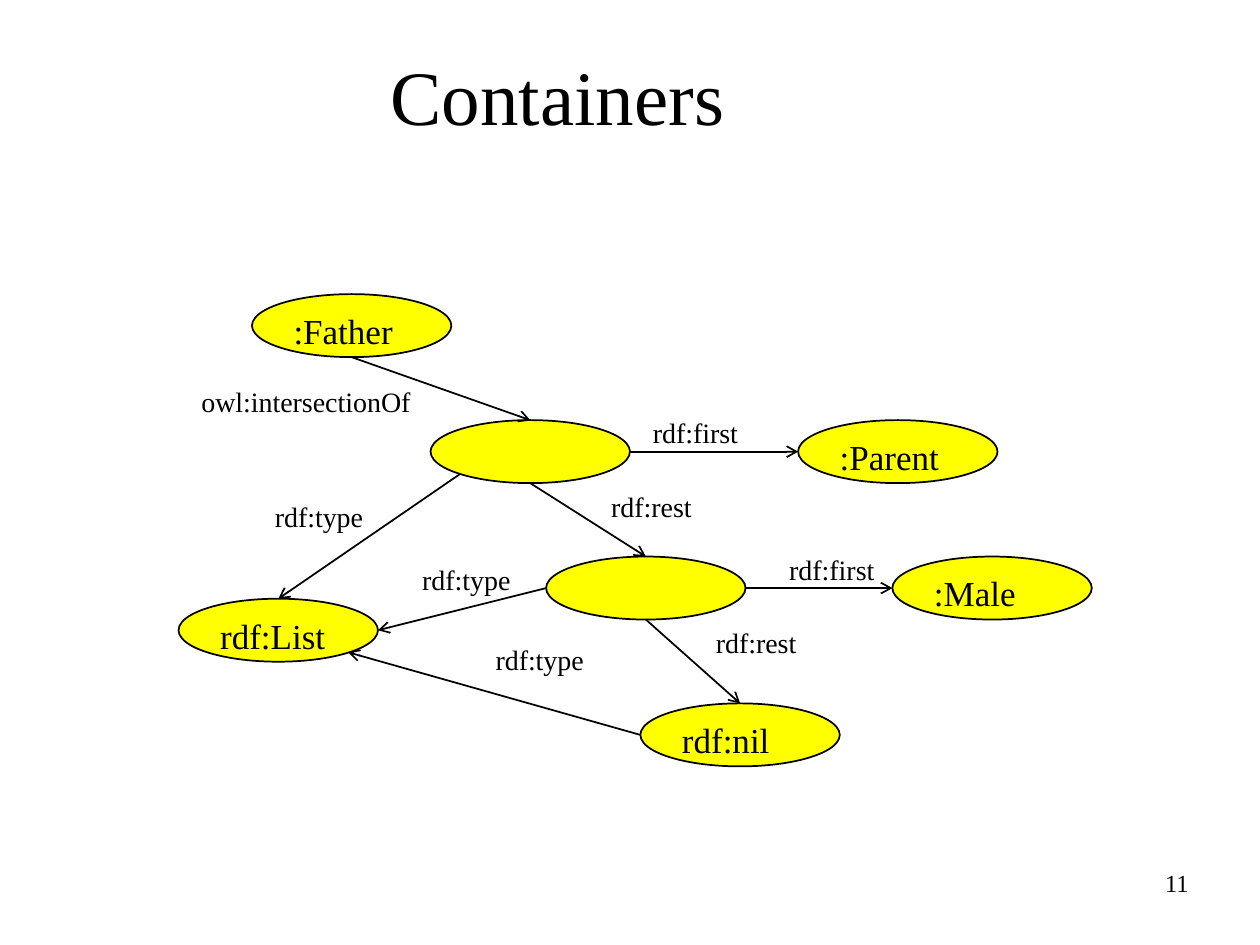
from dataclasses import dataclass

from lxml import etree
from pptx import Presentation
from pptx import util as u
from pptx.dml.color import RGBColor
from pptx.enum import shapes, text
from pptx.oxml.ns import qn


@dataclass(frozen=True)
class Theme:
    font: str = "Times New Roman"
    ink: RGBColor = RGBColor(0, 0, 0)
    node: RGBColor = RGBColor(255, 255, 0)
    title: int = 44
    name: int = 20
    label: int = 16
    number: int = 14
    line: float = 1


THEME = Theme()
DIAGONAL = 0.15
SITES = {
    "top": (0, 0.5, 0),
    "left": (2, 0, 0.5),
    "bottom left": (3, DIAGONAL, 1 - DIAGONAL),
    "bottom": (4, 0.5, 1),
    "bottom right": (5, 1 - DIAGONAL, 1 - DIAGONAL),
    "right": (6, 1, 0.5),
}
NODE_WIDTH, NODE_HEIGHT = 4.02, 1.27
LABEL_HEIGHT = 0.94

NODES = {
    "parent": (":Parent", 16.09, 8.47),
    "male": (":Male", 17.99, 11.22),
    "nil": ("rdf:nil", 12.91, 14.18),
    "list": ("rdf:List", 3.6, 12.07),
    "second": ("", 11.01, 11.22),
    "first": ("", 8.68, 8.47),
    "father": (":Father", 5.08, 5.93),
}
ARROWS = [
    ("father", "bottom", "first", "top"),
    ("first", "bottom left", "list", "top"),
    ("second", "left", "list", "right"),
    ("first", "bottom", "second", "top"),
    ("second", "bottom", "nil", "top"),
    ("first", "right", "parent", "left"),
    ("second", "right", "male", "left"),
    ("nil", "left", "list", "bottom right"),
]
LABEL_WIDTHS = {
    "owl:intersectionOf": 4.8,
    "rdf:type": 2.34,
    "rdf:first": 2.26,
    "rdf:rest": 2.16,
}
LABELS = [
    ("owl:intersectionOf", 3.81, 7.62),
    ("rdf:type", 5.29, 9.95),
    ("rdf:first", 12.91, 8.26),
    ("rdf:first", 15.66, 11.01),
    ("rdf:rest", 12.07, 9.74),
    ("rdf:rest", 14.18, 12.49),
    ("rdf:type", 8.26, 11.22),
    ("rdf:type", 9.74, 12.83),
]


def write(shape, words, size, theme, align=text.PP_ALIGN.LEFT,
          anchor=text.MSO_ANCHOR.TOP, wrap=True, fit=text.MSO_AUTO_SIZE.NONE):
    frame = shape.text_frame
    frame.word_wrap = wrap
    frame.auto_size = fit
    frame.vertical_anchor = anchor
    para = frame.paragraphs[0]
    para.alignment = align
    span = para.add_run()
    span.text = words
    span.font.name = theme.font
    span.font.size = u.Pt(size)
    span.font.color.rgb = theme.ink


class Painter:
    def __init__(self, deck, theme):
        self.theme = theme
        self.page = deck.slides.add_slide(deck.slide_layouts[5])

    def title(self, words, *area):
        box = self.page.shapes.title
        box.left, box.top, box.width, box.height = map(u.Cm, area)
        write(box, words, self.theme.title, self.theme, anchor=text.MSO_ANCHOR.BOTTOM)

    def textbox(self, words, size, *area, **style):
        box = self.page.shapes.add_textbox(*map(u.Cm, area))
        write(box, words, size, self.theme, wrap=False, **style)

    def label(self, words, left, top):
        self.textbox(words, self.theme.label, left, top, LABEL_WIDTHS[words],
                     LABEL_HEIGHT, fit=text.MSO_AUTO_SIZE.SHAPE_TO_FIT_TEXT)

    def node(self, words, left, top):
        area = map(u.Cm, (left, top, NODE_WIDTH, NODE_HEIGHT))
        oval = self.page.shapes.add_shape(shapes.MSO_SHAPE.OVAL, *area)
        oval.shadow.inherit = False
        oval.fill.solid()
        oval.fill.fore_color.rgb = self.theme.node
        oval.line.color.rgb = self.theme.ink
        oval.line.width = u.Pt(self.theme.line)
        if words:
            write(oval, words, self.theme.name, self.theme)
        return oval

    def arrow(self, start, start_side, end, end_side):
        points, joints = [], []
        for tag, oval, side in (("a:stCxn", start, start_side), ("a:endCxn", end, end_side)):
            site, across, down = SITES[side]
            points += [round(oval.left + across * oval.width),
                       round(oval.top + down * oval.height)]
            joints.append((tag, oval.shape_id, site))
        arrow = self.page.shapes.add_connector(shapes.MSO_CONNECTOR.STRAIGHT, *points)
        arrow.line.color.rgb = self.theme.ink
        arrow.line.width = u.Pt(self.theme.line)
        element = arrow.element
        holder = element.find(".//" + qn("p:cNvCxnSpPr"))
        for tag, shape_id, site in joints:
            etree.SubElement(holder, qn(tag), id=str(shape_id), idx=str(site))
        properties = element.find(qn("p:spPr"))
        etree.SubElement(properties.find(qn("a:ln")), qn("a:tailEnd"), type="arrow")
        etree.SubElement(properties, qn("a:effectLst"))


def main():
    deck = Presentation()
    deck.slide_width, deck.slide_height = u.Cm(25.4), u.Cm(19.05)
    painter = Painter(deck, THEME)
    painter.title("Containers", 7.62, 1.06, 17.36, 1.9)
    painter.textbox("11 ", THEME.number, 19.05, 17.15, 5.29, 1.27,
                    align=text.PP_ALIGN.RIGHT, anchor=text.MSO_ANCHOR.MIDDLE)
    ovals = {key: painter.node(*node) for key, node in NODES.items()}
    for start, start_side, end, end_side in ARROWS:
        painter.arrow(ovals[start], start_side, ovals[end], end_side)
    for label in LABELS:
        painter.label(*label)
    deck.save("out.pptx")


if __name__ == "__main__":
    main()
